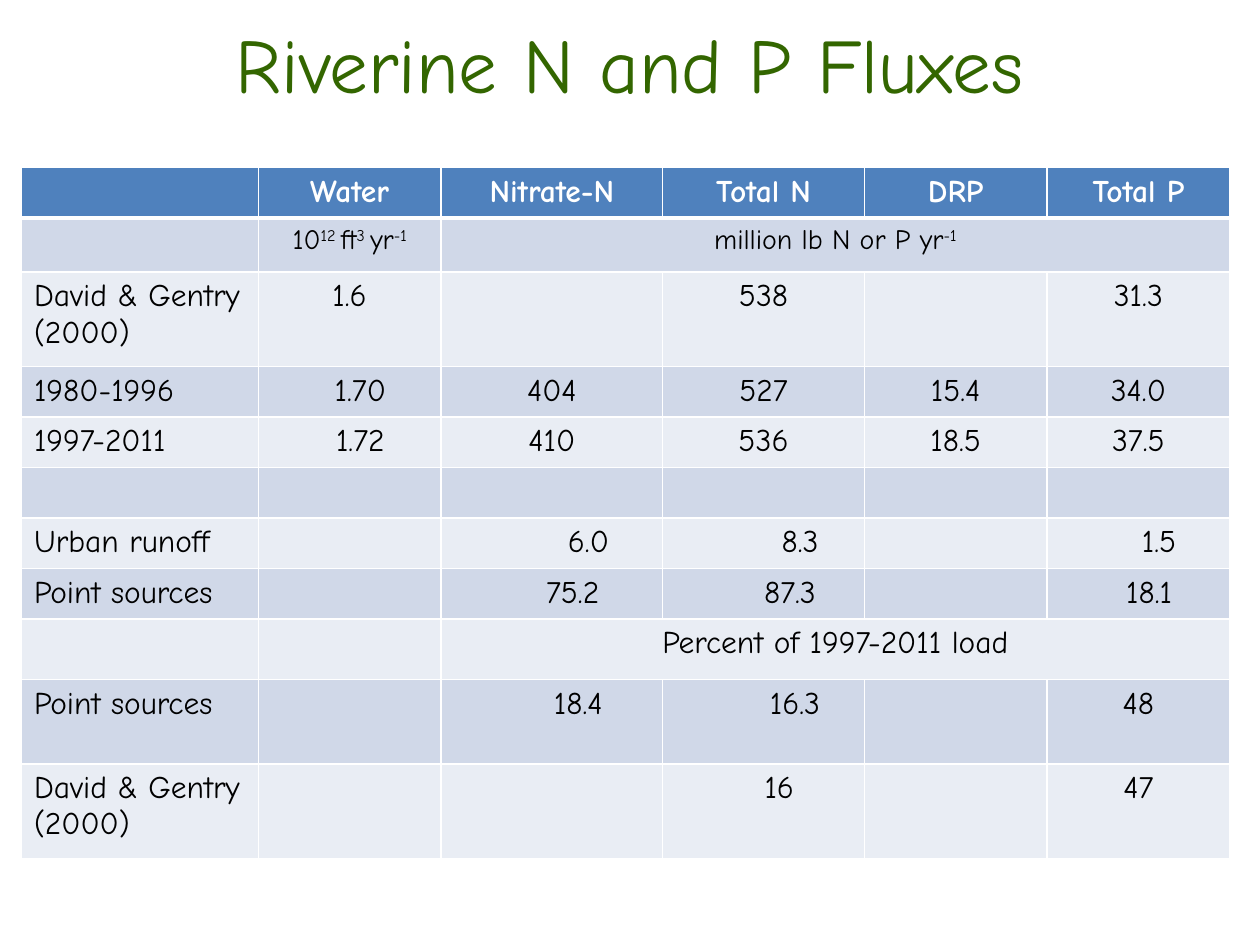
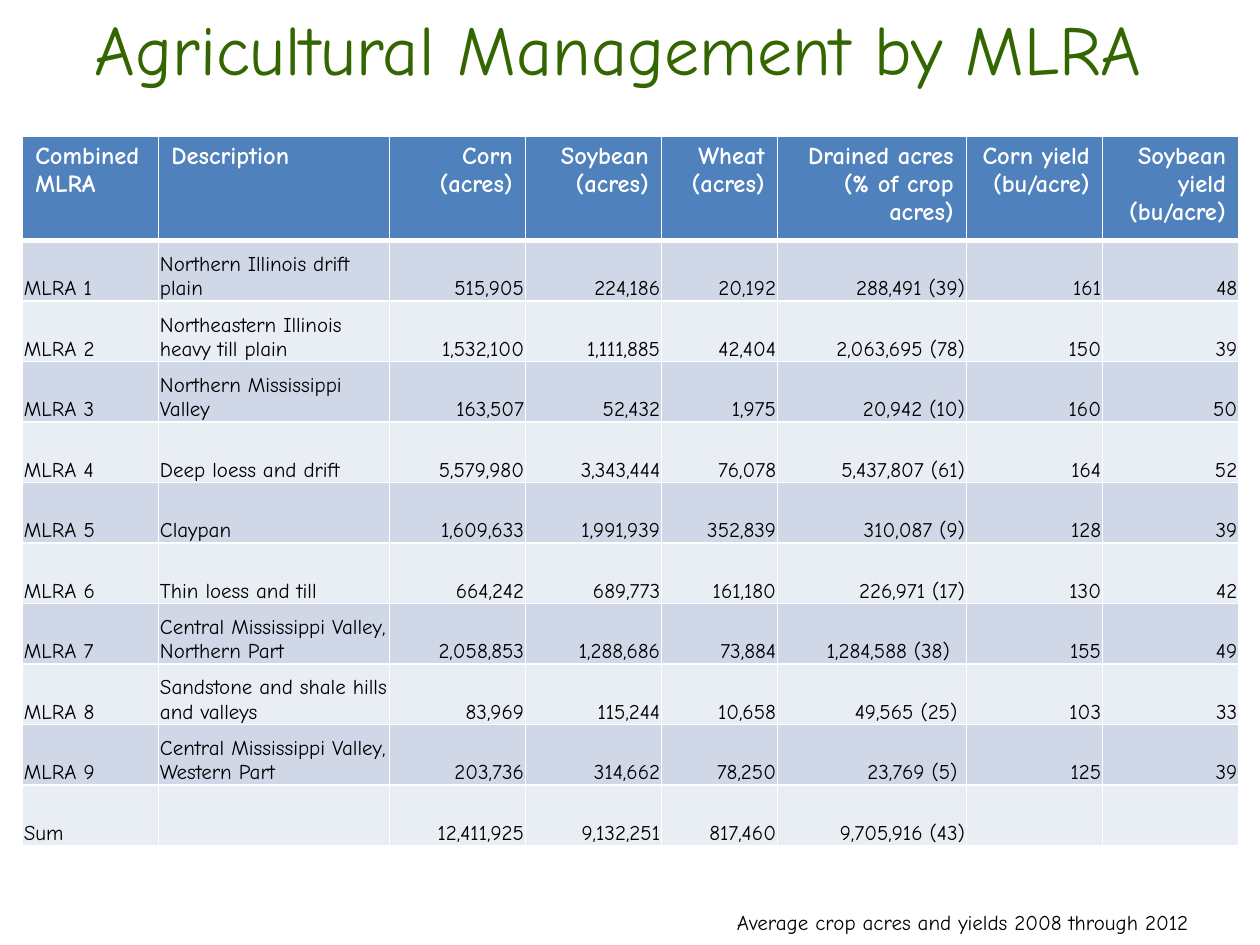
from lxml.etree import SubElement
from pptx import Presentation
from pptx.dml.color import RGBColor
from pptx.enum.text import MSO_ANCHOR as Anchor, PP_ALIGN as Align
from pptx.oxml.ns import qn
from pptx.util import Inches, Pt

COLORS = {
    "title": "336600",
    "header": "4F81BD",
    "band_dark": "D0D8E8",
    "band_light": "E9EDF4",
    "rule": "FFFFFF",
    "header_text": "FFFFFF",
    "text": "000000",
}
FONT = "Comic Neue"
TIGHT = (0.01, 0.01, 0.01, 0)
ROOMY = (0.1, 0.05, 0.1, 0.05)


class Deck:
    def __init__(self, width, height):
        self.presentation = Presentation()
        self.presentation.slide_width = Inches(width)
        self.presentation.slide_height = Inches(height)
        self.slide = None

    def add_slide(self):
        self.slide = self.presentation.slides.add_slide(self.presentation.slide_layouts[6])

    def format_run(self, run, size, color, bold=False):
        run.font.name = FONT
        run.font.size = Pt(size)
        run.font.bold = bold
        run.font.color.rgb = RGBColor.from_string(COLORS[color])

    def fill_text(self, frame, text, size, color, align=Align.LEFT, bold=False):
        frame.text = text
        for paragraph in frame.paragraphs:
            paragraph.alignment = align
            parts = paragraph.text.split("^")
            paragraph.text = parts[0]
            for part in parts[1:]:
                paragraph.add_run().text = part
            for index, run in enumerate(paragraph.runs):
                self.format_run(run, size, color, bold)
                if index % 2:
                    run.font._element.set("baseline", "30000")
            if not text:
                ending = SubElement(paragraph._p, qn("a:endParaRPr"), sz=str(size * 100))
                SubElement(ending, qn("a:latin"), typeface=FONT)

    def text(self, text, box, size, color, align=Align.LEFT, anchor=Anchor.TOP, wrap=True):
        frame = self.slide.shapes.add_textbox(*map(Inches, box)).text_frame
        frame.word_wrap = wrap
        frame.vertical_anchor = anchor
        self.fill_text(frame, text, size, color, align)

    def title(self, text, box, size):
        self.text(text, box, size, "title", Align.CENTER, Anchor.MIDDLE)

    def borders(self, cell, row):
        properties = cell._tc.get_or_add_tcPr()
        widths = {"L": 1, "R": 1, "T": 3 if row == 1 else 1, "B": 3 if row == 0 else 1}
        for side, width in widths.items():
            line = SubElement(properties, qn(f"a:ln{side}"), w=str(Pt(width)))
            fill = SubElement(line, qn("a:solidFill"))
            SubElement(fill, qn("a:srgbClr"), val=COLORS["rule"])

    def cell(self, cell, row, text, size, align, insets, anchor):
        band = "header" if row == 0 else "band_dark" if row % 2 else "band_light"
        self.borders(cell, row)
        cell.fill.solid()
        cell.fill.fore_color.rgb = RGBColor.from_string(COLORS[band])
        cell.margin_left, cell.margin_top, cell.margin_right, cell.margin_bottom = map(Inches, insets)
        cell.vertical_anchor = anchor
        color = "text" if row else "header_text"
        self.fill_text(cell.text_frame, text, size, color, align, bold=row == 0)

    def table(self, left, top, widths, heights, rows, sizes, aligns,
              body_insets=ROOMY, body_anchor=Anchor.TOP, merged=(), shifts=None):
        shifts = shifts or {}
        box = map(Inches, (left, top, sum(widths), sum(heights)))
        table = self.slide.shapes.add_table(len(heights), len(widths), *box).table
        for column, width in zip(table.columns, widths):
            column.width = Inches(width)
        for row, height in zip(table.rows, heights):
            row.height = Inches(height)
        for r, values in enumerate(rows):
            for c, text in enumerate(values):
                before, after = shifts.get((r, c), (0, 0))
                inset_left, inset_top, inset_right, inset_bottom = body_insets if r else ROOMY
                insets = (inset_left + before, inset_top, inset_right + after, inset_bottom)
                anchor = body_anchor if r else Anchor.TOP
                self.cell(table.cell(r, c), r, text, sizes[r], aligns[c], insets, anchor)
        for r, first, last in merged:
            table.cell(r, first).merge(table.cell(r, last))


def add_fluxes(deck):
    deck.add_slide()
    deck.title("Riverine N and P Fluxes", (0.5, 0.08, 9, 0.83), 44)
    fluxes = [
        ["", "Water", "Nitrate-N", "Total N", "DRP", "Total P"],
        ["", "10^12 ^ft^3 ^yr^-1", "million lb N or P yr^-1", "", "", ""],
        ["David & Gentry (2000)", "1.6", "", "538", "", "31.3"],
        ["1980-1996", "1.70", "404", "527", "15.4", "34.0"],
        ["1997-2011", "1.72", "410", "536", "18.5", "37.5"],
        [""] * 6,
        ["Urban runoff", "", "6.0", "8.3", "", "1.5"],
        ["Point sources", "", "75.2", "87.3", "", "18.1"],
        ["", "", "Percent of 1997-2011 load", "", "", ""],
        ["Point sources", "", "18.4", "16.3", "", "48"],
        ["David & Gentry (2000)", "", "", "16", "", "47"],
    ]
    indents = {
        (3, 1): 0.17, (4, 1): 0.17,
        (6, 2): 0.58, (6, 3): 0.58, (6, 5): 0.33,
        (7, 2): 0.33, (7, 3): 0.42, (7, 5): 0.17,
        (9, 2): 0.42, (9, 3): 0.5, (10, 3): 0.25,
    }
    deck.table(
        0.17, 1.33,
        widths=[1.88, 1.45, 1.76, 1.6, 1.45, 1.45],
        heights=[0.38, 0.43, 0.75] + [0.39] * 4 + [0.4, 0.48, 0.67, 0.75],
        rows=fluxes,
        sizes=[18, 16] + [18] * 9,
        aligns=[Align.LEFT] + [Align.CENTER] * 5,
        merged=[(1, 2, 5), (8, 2, 5)],
        shifts={place: (indent, 0) for place, indent in indents.items()},
    )


def add_management(deck):
    deck.add_slide()
    deck.title("Agricultural Management by MLRA ", (0, 0, 10, 0.75), 40)
    regions = [
        ["Northern Illinois drift plain", "515,905", "224,186", "20,192", "288,491 (39)", "161", "48"],
        ["Northeastern Illinois heavy till plain", "1,532,100", "1,111,885", "42,404",
         "2,063,695 (78)", "150", "39"],
        ["Northern Mississippi Valley", "163,507", "52,432", "1,975", "20,942 (10)", "160", "50"],
        ["Deep loess and drift", "5,579,980", "3,343,444", "76,078", "5,437,807 (61)", "164", "52"],
        ["Claypan", "1,609,633", "1,991,939", "352,839", "310,087 (9)", "128", "39"],
        ["Thin loess and till", "664,242", "689,773", "161,180", "226,971 (17)", "130", "42"],
        ["Central Mississippi Valley, Northern Part", "2,058,853", "1,288,686", "73,884",
         "1,284,588 (38)", "155", "49"],
        ["Sandstone and shale hills and valleys", "83,969", "115,244", "10,658",
         "49,565 (25)", "103", "33"],
        ["Central Mississippi Valley, Western Part", "203,736", "314,662", "78,250",
         "23,769 (5)", "125", "39"],
    ]
    header = ["Combined MLRA", "Description", "Corn (acres)", "Soybean\n(acres)", "Wheat\n(acres)",
              "Drained acres (% of crop acres)", "Corn yield (bu/acre)", "Soybean yield (bu/acre)"]
    total = ["Sum", "", "12,411,925", "9,132,251", "817,460", "9,705,916 (43)", "", ""]
    numbered = [[f"MLRA {number}", *region] for number, region in enumerate(regions, 1)]
    deck.table(
        0.18, 1.08,
        widths=[1.08, 1.83, 1.08, 1.08, 0.92, 1.5, 1.08, 1.08],
        heights=[0.83] + [0.48] * 10,
        rows=[header, *numbered, total],
        sizes=[14] + [12] * 10,
        aligns=[Align.LEFT] * 2 + [Align.RIGHT] * 6,
        body_insets=TIGHT,
        body_anchor=Anchor.BOTTOM,
        shifts={(7, 5): (0, 0.12), (8, 5): (0, 0.06), (9, 5): (0, 0.06)},
    )
    deck.text("Average crop acres and yields 2008 through 2012", (5.75, 7.17, 4.12, 0.3),
              12, "text", wrap=False)


def main():
    deck = Deck(10, 7.5)
    add_fluxes(deck)
    add_management(deck)
    deck.presentation.save("out.pptx")


if __name__ == "__main__":
    main()
